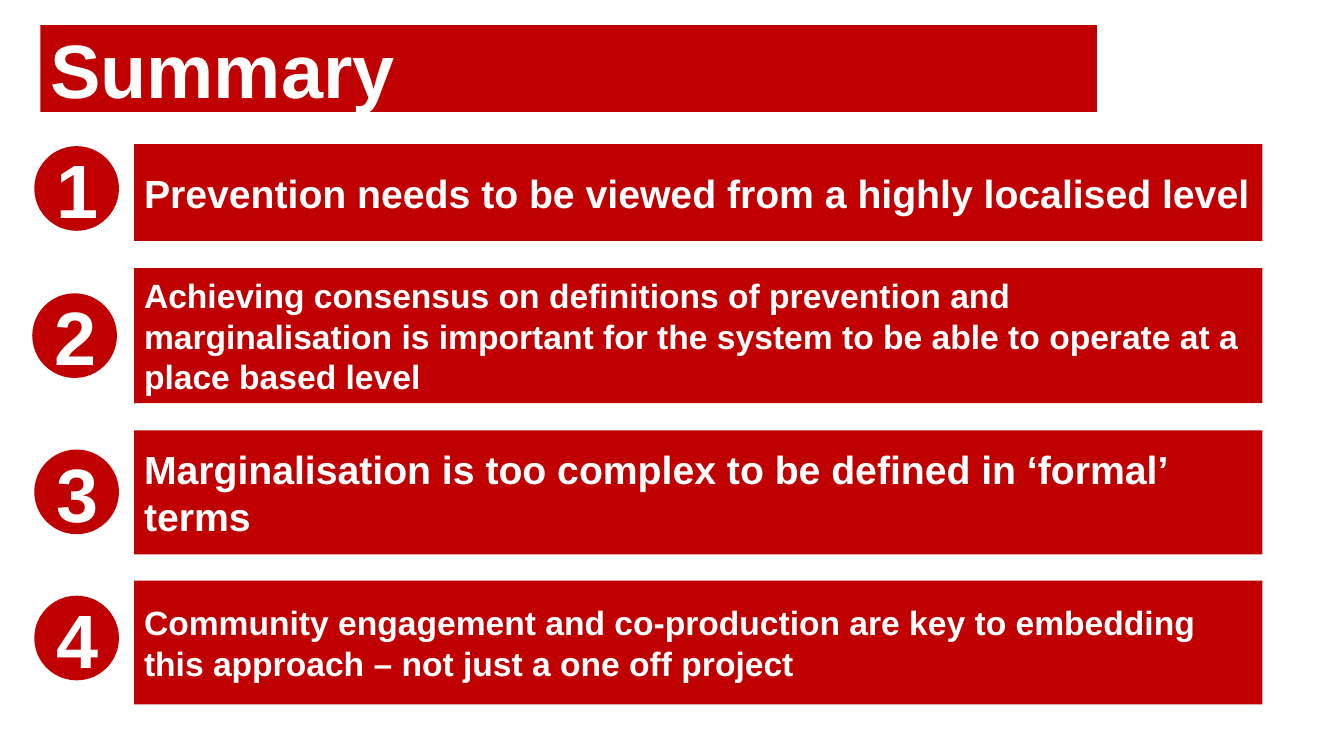
from pptx import Presentation
from pptx.dml.color import RGBColor
from pptx.enum.shapes import MSO_SHAPE
from pptx.enum.text import MSO_ANCHOR, PP_ALIGN
from pptx.util import Inches, Pt

RED = RGBColor(0xC0, 0x00, 0x00)
WHITE = RGBColor(0xFF, 0xFF, 0xFF)
FONT_FORMAT = {"name": "Arial", "bold": True}

POINT_LEFT, POINT_WIDTH = 1.33, 11.19
BADGE_SIZE = 0.84

# point top, point height, badge left, badge top, text size, text
POINTS = [
    (1.43, 0.96, 0.34, 1.45, 28,
     "Prevention needs to be viewed from a highly localised level"),
    (2.66, 1.34, 0.32, 2.91, 24,
     "Achieving consensus on definitions of prevention and marginalisation "
     "is important for the system to be able to operate at a place based level"),
    (4.27, 1.23, 0.34, 4.46, 28,
     "Marginalisation is too complex to be defined in ‘formal’ terms"),
    (5.76, 1.23, 0.34, 5.91, 24,
     "Community engagement and co-production are key to embedding "
     "this approach – not just a one off project"),
]


def add_red_shape(slide, kind, box, text, size, alignment=PP_ALIGN.LEFT):
    """Add a borderless red shape with bold white text; box is in inches."""
    shape = slide.shapes.add_shape(kind, *map(Inches, box))
    shape.shadow.inherit = False
    shape.fill.solid()
    shape.fill.fore_color.rgb = RED
    shape.line.fill.background()

    frame = shape.text_frame
    frame.word_wrap = True
    frame.vertical_anchor = MSO_ANCHOR.MIDDLE
    paragraph = frame.paragraphs[0]
    paragraph.alignment = alignment
    run = paragraph.add_run()
    run.text = text
    for attribute, value in FONT_FORMAT.items():
        setattr(run.font, attribute, value)
    run.font.size = Pt(size)
    run.font.color.rgb = WHITE


def add_title(slide, box):
    add_red_shape(slide, MSO_SHAPE.RECTANGLE, box, "Summary", 54)


def add_point(slide, box, text, size):
    add_red_shape(slide, MSO_SHAPE.RECTANGLE, box, text, size)


def add_badge(slide, box, number):
    add_red_shape(slide, MSO_SHAPE.OVAL, box, str(number), 54, PP_ALIGN.CENTER)


def main():
    presentation = Presentation()
    presentation.slide_width = Inches(13.33)
    presentation.slide_height = Inches(7.5)
    slide = presentation.slides.add_slide(presentation.slide_layouts[6])

    add_title(slide, (0.4, 0.25, 10.48, 0.86))
    for number, point in enumerate(POINTS, start=1):
        top, height, badge_left, badge_top, size, text = point
        add_point(slide, (POINT_LEFT, top, POINT_WIDTH, height), text, size)
        add_badge(slide, (badge_left, badge_top, BADGE_SIZE, BADGE_SIZE), number)

    presentation.save("out.pptx")


if __name__ == "__main__":
    main()
